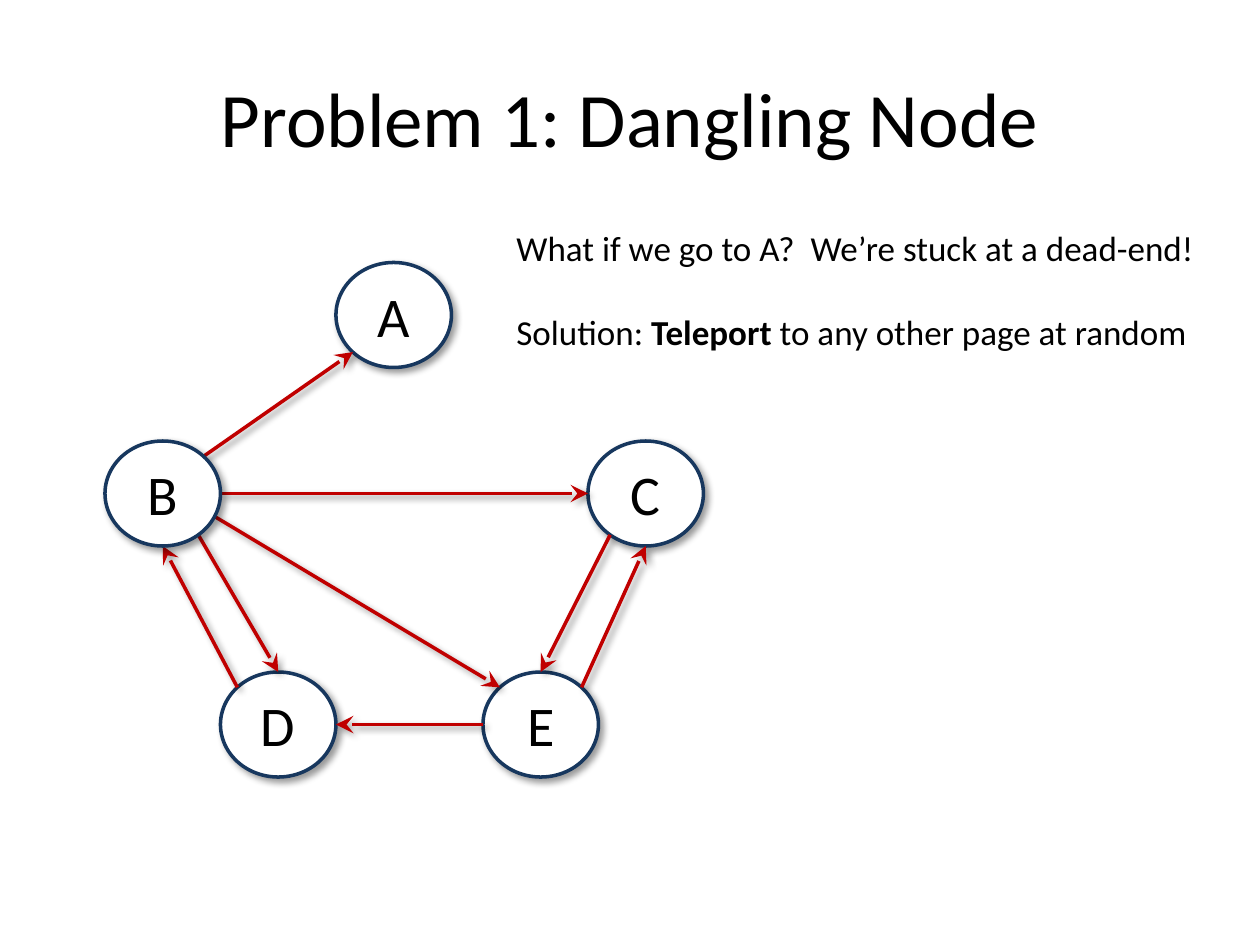
import math

from pptx import Presentation
from pptx import util as u
from pptx.dml.color import RGBColor
from pptx.enum import shapes, text
from pptx.oxml import parse_xml
from pptx.oxml.ns import nsdecls, qn

SCALE = 914400 // 120  # EMU per px, 120 px to the inch
BLACK, WHITE, NAVY, RED = "000000", "FFFFFF", "17375E", "C00000"

TITLE = "Problem 1: Dangling Node"
NOTES = [
    [("What if we go to A?  We’re stuck at a dead-end!", False)],
    [("Solution: ", False), ("Teleport", True),
     (" to any other page at random", False)],
]

NODE_WIDTH, NODE_HEIGHT = 110, 100
NODES = {  # left, top
    "A": (320, 250),
    "C": (560, 420),
    "D": (210, 640),
    "E": (460, 640),
    "B": (100, 420),
}
FRONT_NODE = "B"  # lies above the arrows

# from node, angle, to node, angle: degrees clockwise from the right
EDGES = [
    ("B", -45, "A", 135),
    ("B", 0, "C", 180),
    ("B", 52, "D", -90),
    ("D", -135, "B", 90),
    ("E", 180, "D", 0),
    ("C", 128, "E", -90),
    ("E", -45, "C", 90),
    ("B", 26, "E", -135),
]


def px(value):
    return u.Emu(round(value * SCALE))


def color(value):
    return RGBColor.from_string(value)


def write(shape, paragraphs, *, size, align=text.PP_ALIGN.LEFT,
          anchor=text.MSO_ANCHOR.TOP, gap=0):
    """Fill a shape with paragraphs, each a list of (words, bold) runs."""
    frame = shape.text_frame
    frame.word_wrap = True
    frame.vertical_anchor = anchor
    for index, runs in enumerate(paragraphs):
        paragraph = frame.add_paragraph() if index else frame.paragraphs[0]
        paragraph.alignment = align
        if index:
            paragraph.space_before = u.Pt(gap)
        for words, bold in runs:
            run = paragraph.add_run()
            run.text = words
            run.font.name = "Calibri"
            run.font.size = u.Pt(size)
            run.font.bold = bold
            run.font.color.rgb = color(BLACK)


def add_text(slide, box, paragraphs, **style):
    shape = slide.shapes.add_textbox(*map(px, box))
    write(shape, paragraphs, **style)


def style_outline(shape, line_color):
    """Give a node or arrow its line and soft drop shadow."""
    shape.line.color.rgb = color(line_color)
    shape.line.width = u.Pt(2)
    shape.element.spPr.append(parse_xml(
        f'<a:effectLst {nsdecls("a")}>'
        '<a:outerShdw blurRad="50800" dist="38100" dir="2700000" '
        'algn="tl" rotWithShape="0">'
        f'<a:srgbClr val="{BLACK}"><a:alpha val="40000"/></a:srgbClr>'
        '</a:outerShdw></a:effectLst>'))


def add_node(slide, name):
    box = (*NODES[name], NODE_WIDTH, NODE_HEIGHT)
    node = slide.shapes.add_shape(shapes.MSO_SHAPE.OVAL, *map(px, box))
    node.fill.solid()
    node.fill.fore_color.rgb = color(WHITE)
    style_outline(node, NAVY)
    write(node, [[(name, False)]], size=32, align=text.PP_ALIGN.CENTER,
          anchor=text.MSO_ANCHOR.MIDDLE)


def rim_point(name, degrees):
    left, top = NODES[name]
    angle = math.radians(degrees)
    return (px(left + NODE_WIDTH / 2 * (1 + math.cos(angle))),
            px(top + NODE_HEIGHT / 2 * (1 + math.sin(angle))))


def add_edge(slide, source, source_angle, target, target_angle):
    edge = slide.shapes.add_connector(
        shapes.MSO_CONNECTOR.STRAIGHT,
        *rim_point(source, source_angle), *rim_point(target, target_angle))
    style_outline(edge, RED)
    edge.element.spPr.find(qn("a:ln")).append(
        parse_xml(f'<a:tailEnd {nsdecls("a")} type="stealth" w="lg" len="lg"/>'))


def main():
    presentation = Presentation()
    presentation.slide_width, presentation.slide_height = px(1200), px(900)
    slide = presentation.slides.add_slide(presentation.slide_layouts[6])

    add_text(slide, (60, 36, 1080, 150), [[(TITLE, False)]], size=44,
             align=text.PP_ALIGN.CENTER, anchor=text.MSO_ANCHOR.MIDDLE)
    add_text(slide, (480, 210, 690, 133), NOTES, size=20, gap=24)

    for name in NODES:
        if name != FRONT_NODE:
            add_node(slide, name)
    for edge in EDGES:
        add_edge(slide, *edge)
    add_node(slide, FRONT_NODE)

    presentation.save("out.pptx")


if __name__ == "__main__":
    main()
